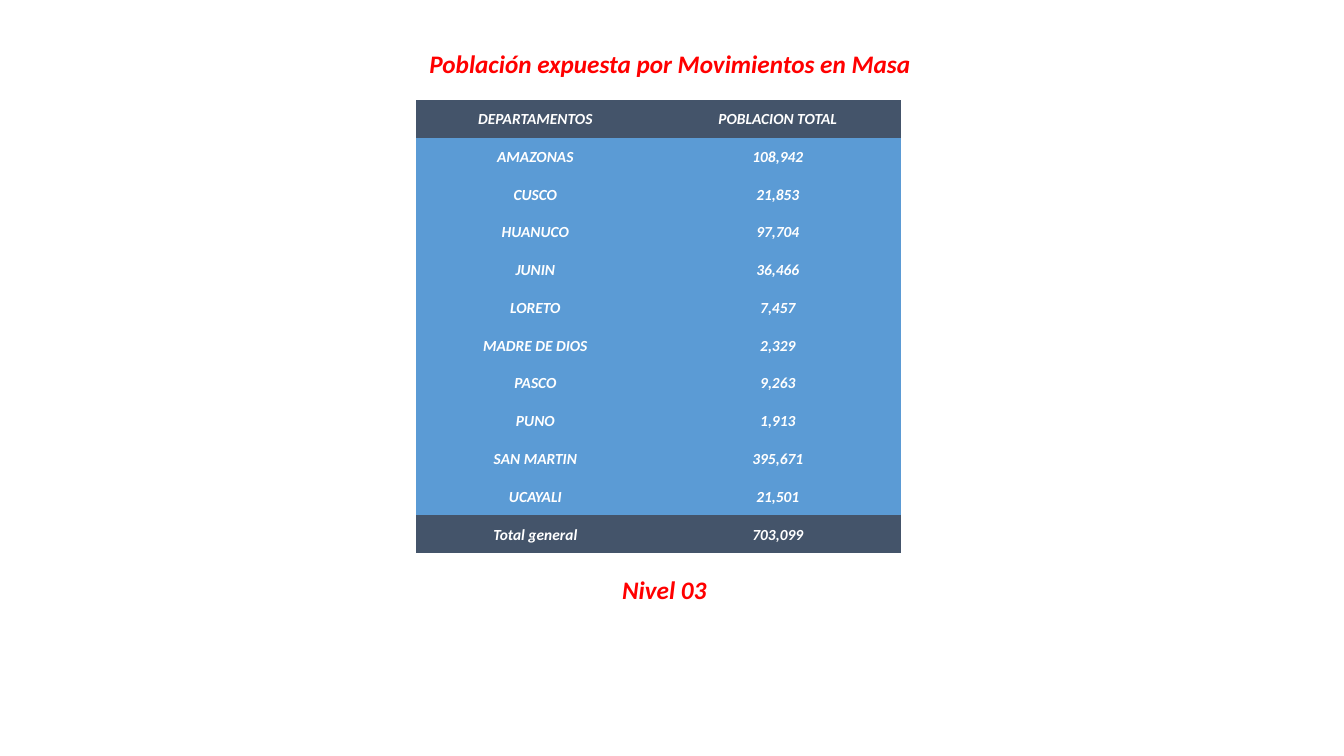
from pptx import Presentation
from pptx.dml.color import RGBColor
from pptx.enum.text import MSO_ANCHOR, MSO_AUTO_SIZE, PP_ALIGN
from pptx.oxml.ns import qn
from pptx.util import Inches, Pt

RED = RGBColor(0xFF, 0x00, 0x00)
WHITE = RGBColor(0xFF, 0xFF, 0xFF)
NAVY = RGBColor(0x44, 0x54, 0x6A)
BLUE = RGBColor(0x5B, 0x9B, 0xD5)
NO_GRID_STYLE = "{2D5ABB26-0587-4C30-8999-92F81FD0307C}"

POPULATION = [
    ("DEPARTAMENTOS", "POBLACION TOTAL"),
    ("AMAZONAS", "108,942"),
    ("CUSCO", "21,853"),
    ("HUANUCO", "97,704"),
    ("JUNIN", "36,466"),
    ("LORETO", "7,457"),
    ("MADRE DE DIOS", "2,329"),
    ("PASCO", "9,263"),
    ("PUNO", "1,913"),
    ("SAN MARTIN", "395,671"),
    ("UCAYALI", "21,501"),
    ("Total general", "703,099"),
]


def write(text_frame, text, size, color):
    text_frame.text = text
    paragraph = text_frame.paragraphs[0]
    paragraph.alignment = PP_ALIGN.CENTER
    font = paragraph.runs[0].font
    font.name = "Calibri"
    font.size = Pt(size)
    font.bold = True
    font.italic = True
    font.color.rgb = color


presentation = Presentation()
presentation.slide_width = Inches(13.33)
presentation.slide_height = Inches(7.5)
slide = presentation.slides.add_slide(presentation.slide_layouts[5])

title = slide.shapes.title
title.left, title.top = Inches(4.13), Inches(0.43)
title.width, title.height = Inches(5.03), Inches(0.4)
level = slide.shapes.add_textbox(Inches(6.04), Inches(5.65), Inches(1.1), Inches(0.4))

for shape, text, wrap in (
    (title, "Población expuesta por Movimientos en Masa", False),
    (level, "Nivel 03", True),
):
    write(shape.text_frame, text, 18, RED)
    shape.text_frame.word_wrap = wrap
    shape.text_frame.auto_size = MSO_AUTO_SIZE.SHAPE_TO_FIT_TEXT
    shape.text_frame.vertical_anchor = MSO_ANCHOR.TOP

table = slide.shapes.add_table(
    len(POPULATION), 2, Inches(4.13), Inches(0.99), Inches(4.81), Inches(4.5)
).table
table._tbl.tblPr.find(qn("a:tableStyleId")).text = NO_GRID_STYLE
table.horz_banding = False
table.columns[0].width = Inches(2.36)
table.columns[1].width = Inches(2.45)

for row_index, row_values in enumerate(POPULATION):
    is_edge_row = row_index in (0, len(POPULATION) - 1)
    for column_index, value in enumerate(row_values):
        cell = table.cell(row_index, column_index)
        cell.margin_left = cell.margin_right = cell.margin_top = Inches(0.01)
        cell.margin_bottom = 0
        cell.vertical_anchor = MSO_ANCHOR.MIDDLE
        cell.fill.solid()
        cell.fill.fore_color.rgb = NAVY if is_edge_row else BLUE
        write(cell.text_frame, value, 11, WHITE)

presentation.save("out.pptx")
